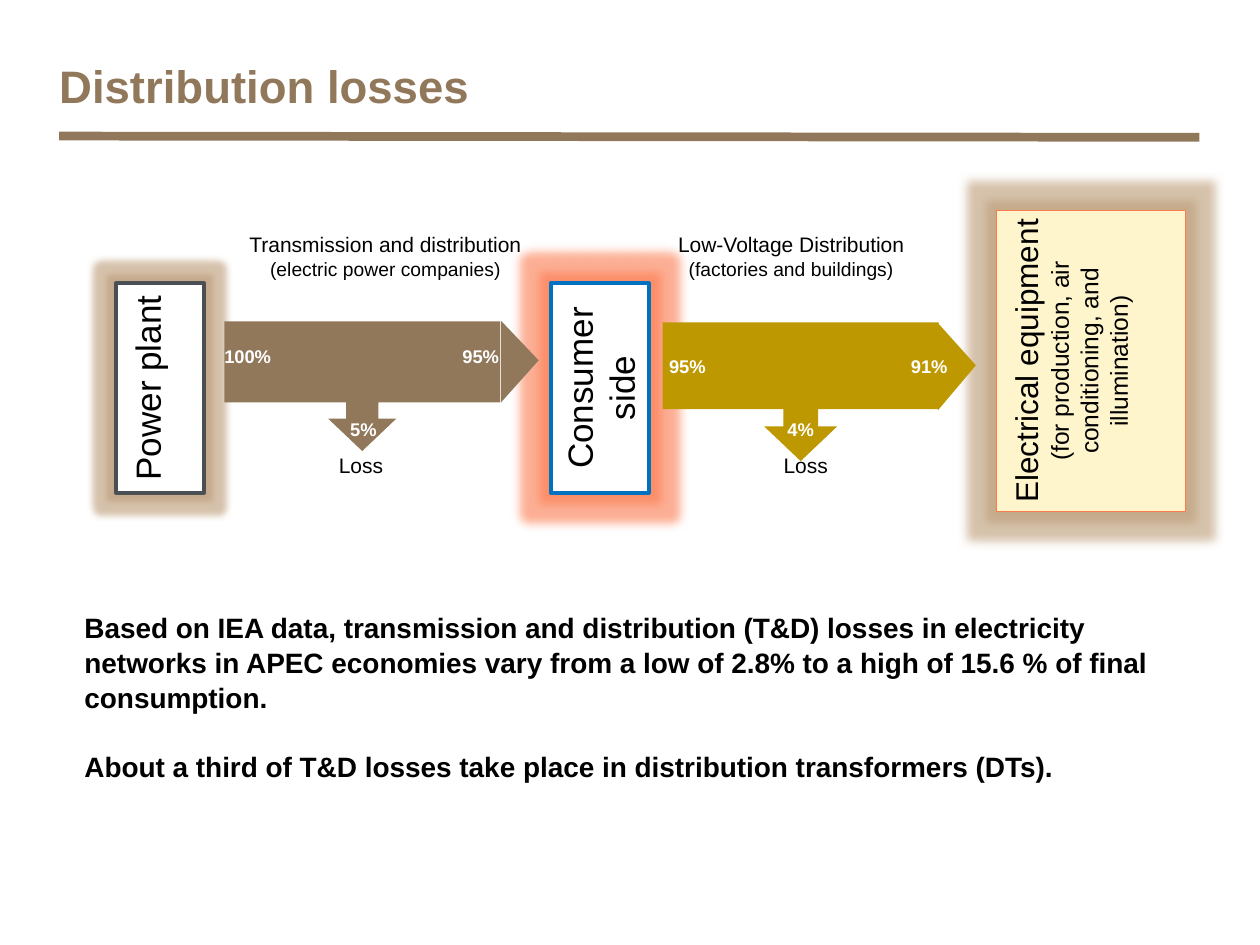
from lxml.etree import SubElement
from pptx import Presentation
from pptx.dml.color import RGBColor
from pptx.enum.shapes import MSO_CONNECTOR, MSO_SHAPE
from pptx.enum.text import MSO_ANCHOR, PP_ALIGN
from pptx.oxml.ns import qn
from pptx.util import Inches, Pt

BROWN, GOLD, WHITE, BLACK = "91785B", "BE9800", "FFFFFF", "000000"
TAN, ORANGE = "BC9B76", "FC7B4F"


def rgb(value):
    return RGBColor.from_string(value)


class Deck:
    font = "Arial"

    def __init__(self, prs):
        self.s = prs.slides.add_slide(prs.slide_layouts[5])

    def frame(self, tf, insets=(0, 0), anchor=MSO_ANCHOR.TOP):
        tf.word_wrap = True
        tf.vertical_anchor = anchor
        tf.margin_left = tf.margin_right = Inches(insets[0])
        tf.margin_top = tf.margin_bottom = Inches(insets[1])

    def run(self, p, text, size, color=BLACK, bold=False):
        r = p.add_run()
        r.text = text
        r.font.name, r.font.size, r.font.bold = self.font, Pt(size), bold
        r.font.color.rgb = rgb(color)

    def title(self, text):
        sp = self.s.shapes.title
        sp.left, sp.top, sp.width, sp.height = map(Inches, (0.47, 0.44, 8.48, 0.58))
        self.frame(sp.text_frame)
        p = sp.text_frame.paragraphs[0]
        p.alignment = PP_ALIGN.LEFT
        p.line_spacing = 1.05
        self.run(p, text, 26, BROWN, True)

    def rule(self, x1, y1, x2, y2):
        line = self.s.shapes.add_connector(
            MSO_CONNECTOR.STRAIGHT, *map(Inches, (x1, y1, x2, y2)))
        line.line.color.rgb = rgb(BROWN)
        line.line.width = Pt(5)
        SubElement(line._element.spPr, qn("a:effectLst"))

    def shape(self, kind, x, y, w, h, fill, adjust=(), rotation=0):
        sp = self.s.shapes.add_shape(kind, *map(Inches, (x, y, w, h)))
        sp.shadow.inherit = False
        sp.fill.solid()
        sp.fill.fore_color.rgb = rgb(fill)
        sp.line.fill.background()
        sp.rotation = rotation
        for i, value in enumerate(adjust):
            sp.adjustments[i] = value
        return sp

    def label(self, x, y, w, h, lines, fill=WHITE, anchor=MSO_ANCHOR.TOP):
        sp = self.shape(MSO_SHAPE.RECTANGLE, x, y, w, h, fill)
        self.frame(sp.text_frame, (0.08, 0.01), anchor)
        p = sp.text_frame.paragraphs[0]
        p.alignment = PP_ALIGN.CENTER
        for i, (text, size) in enumerate(lines):
            if i:
                p.add_line_break()
            self.run(p, text, size)
        return sp

    def station(self, x, y, w, h, lines, line, width, glow, radius,
                fill=WHITE, anchor=MSO_ANCHOR.TOP):
        sp = self.label(x, y, w, h, lines, fill, anchor)
        sp.line.color.rgb = rgb(line)
        sp.line.width = Pt(width)
        sp.text_frame._txBody.bodyPr.set("vert", "vert270")
        effects = sp._element.spPr.find(qn("a:effectLst"))
        halo = SubElement(effects, qn("a:glow"), rad=str(Pt(radius)))
        color = SubElement(halo, qn("a:srgbClr"), val=glow)
        SubElement(color, qn("a:alpha"), val="60000")

    def text(self, x, y, w, h, paragraphs, size, color, spacing=1.0, gap=0):
        tf = self.s.shapes.add_textbox(*map(Inches, (x, y, w, h))).text_frame
        self.frame(tf)
        for i, text in enumerate(paragraphs):
            p = tf.add_paragraph() if i else tf.paragraphs[0]
            p.line_spacing = spacing
            if i:
                p.space_before = Pt(gap)
            self.run(p, text, size, color, True)

    def flow(self, body, head, color, percents):
        self.shape(MSO_SHAPE.DOWN_ARROW_CALLOUT, *body, color,
                   (0.25, 0.263, 0.25, 0.625))
        self.shape(MSO_SHAPE.ISOSCELES_TRIANGLE, *head, color, (0.485,), 90)
        for x, y, w, value in percents:
            self.text(x, y, w, 0.18, [value], 10.5, WHITE)


def main():
    prs = Presentation()
    prs.slide_width, prs.slide_height = Inches(10), Inches(7.5)
    deck = Deck(prs)
    deck.title("Distribution losses")
    deck.rule(0.47, 1.08, 9.52, 1.09)

    for x, name, place in (
            (1.84, "Transmission and distribution", "(electric power companies)"),
            (5.06, "Low-Voltage Distribution", "(factories and buildings)")):
        deck.label(x, 1.83, 2.44, 0.48, [(name, 12), (place, 11)])
    for x in (2.48, 6.01):
        deck.label(x, 3.58, 0.77, 0.17, [("Loss", 12)])

    deck.station(0.92, 2.25, 0.7, 1.66, [("Power plant", 20)],
                 "4A4F55", 2.25, TAN, 8)
    deck.station(4.37, 2.25, 0.78, 1.66, [("Consumer side", 20)],
                 "0070C0", 2.25, ORANGE, 11, anchor=MSO_ANCHOR.MIDDLE)
    deck.station(7.91, 1.67, 1.5, 2.39,
                 [("Electrical equipment", 18),
                  ("(for production, air conditioning, and illumination)", 14)],
                 ORANGE, 0.75, TAN, 11, "FFF5CC")

    deck.flow((1.78, 2.55, 2.19, 1.03), (3.8, 2.72, 0.65, 0.3), BROWN,
              [(1.78, 2.74, 0.61, "100%"), (3.67, 2.74, 0.61, "95%"),
               (2.78, 3.32, 0.3, "5%")])
    deck.flow((5.26, 2.56, 2.19, 1.1), (7.25, 2.76, 0.69, 0.3), GOLD,
              [(5.31, 2.82, 0.61, "95%"), (7.23, 2.82, 0.61, "91%"),
               (6.25, 3.32, 0.3, "4%")])

    deck.text(0.67, 4.83, 8.92, 1.38, [
        "Based on IEA data, transmission and distribution (T&D) losses in "
        "electricity networks in APEC economies vary from a low of 2.8% to a "
        "high of 15.6 % of final consumption.",
        "About a third of T&D losses take place in distribution transformers "
        "(DTs)."], 16, BLACK, 1.05, 19)
    prs.save("out.pptx")


if __name__ == "__main__":
    main()
